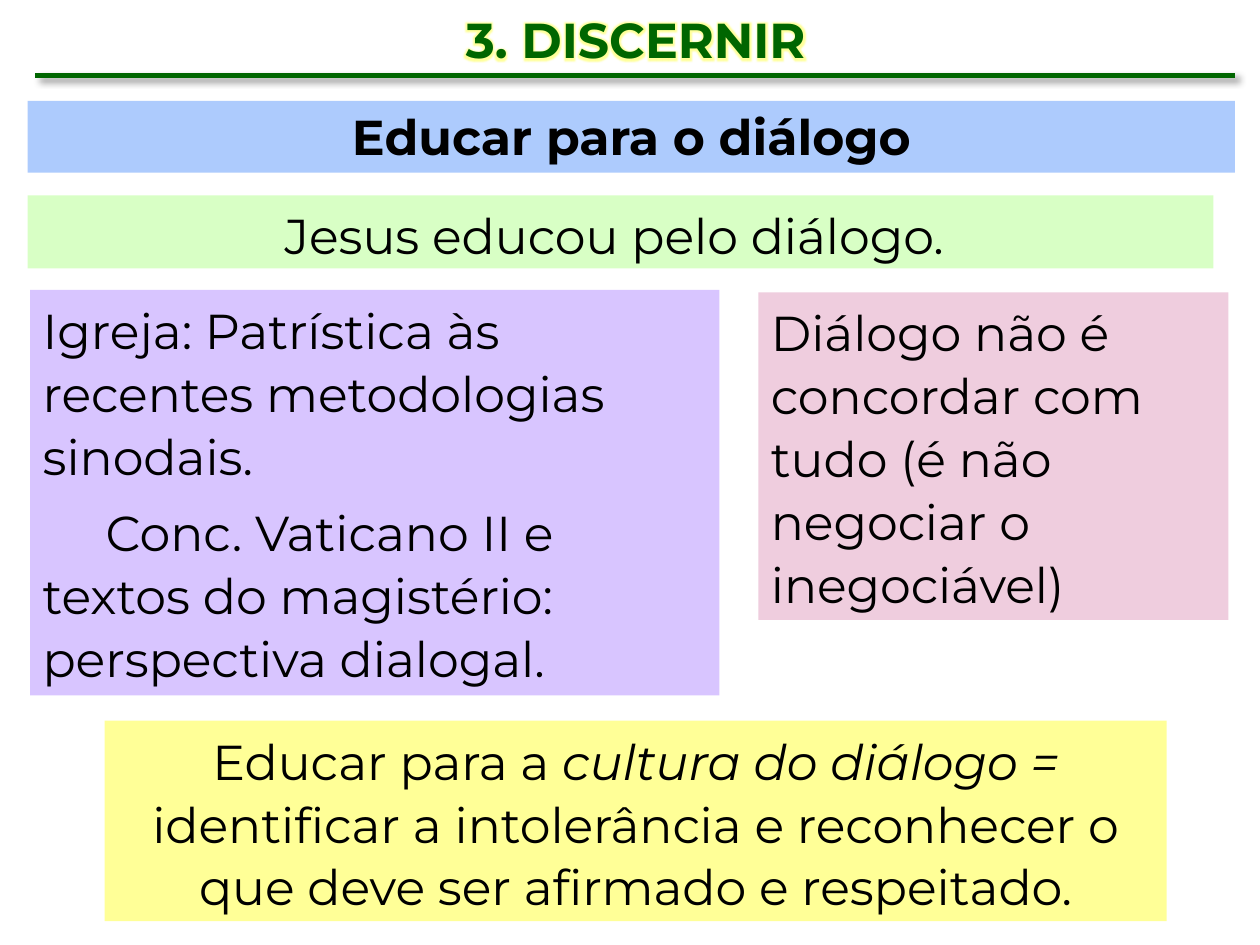
from dataclasses import dataclass

from lxml import etree
from pptx import Presentation
from pptx import util as u
from pptx.dml.color import RGBColor
from pptx.enum import shapes, text
from pptx.oxml.ns import qn

COLORS = {
    "green": "006600", "black": "000000", "glow": "FFFF99",
    "blue": "ADCBFD", "mint": "D8FFC5", "pink": "EFCDDE",
    "lilac": "D8C5FF", "yellow": "FFFF97",
}
FONT = {"name": "Montserrat", "size": u.Pt(28)}
BODY = {"line_spacing": 1.07, "space_after": u.Pt(8)}
CENTER = {"alignment": text.PP_ALIGN.CENTER}
LEFT = {"alignment": text.PP_ALIGN.LEFT}
BOLD = {"bold": True}
ITALIC = {"italic": True}


@dataclass
class Run:
    text: str
    fmt: dict


@dataclass
class Panel:
    box: tuple[float, float, float, float]
    fill: str
    para_fmt: dict
    paragraphs: list[list[Run]]


PANELS = [
    Panel((0.22, 0.8, 9.58, 0.57), "blue", CENTER,
          [[Run("Educar para o diálogo", BOLD)]]),
    Panel((0.22, 1.55, 9.41, 0.58), "mint", BODY | CENTER,
          [[Run("Jesus educou pelo diálogo. ", {})]]),
    Panel((6.02, 2.32, 3.73, 2.6), "pink", BODY | LEFT,
          [[Run("Diálogo não é concordar com tudo (é não negociar o inegociável)", {})]]),
    Panel((0.24, 2.3, 5.47, 3.22), "lilac", BODY | LEFT,
          [[Run("Igreja: Patrística às recentes metodologias sinodais.", {})],
           [Run("\tConc. Vaticano II e textos do magistério: perspectiva dialogal.", {})]]),
    Panel((0.83, 5.72, 8.43, 1.59), "yellow", BODY | CENTER,
          [[Run("Educar para a ", {}),
            Run("cultura do diálogo =", ITALIC),
            Run(" identificar a intolerância e reconhecer o que deve ser "
                "afirmado e respeitado.", {})]]),
]


def rgb(name: str) -> RGBColor:
    return RGBColor.from_string(COLORS[name])


def apply(target, fmt: dict) -> None:
    for key, value in fmt.items():
        setattr(target, key, value)


def add_run(p, run: Run, color: str = "black"):
    r = p.add_run()
    r.text = run.text
    apply(r.font, FONT | run.fmt)
    r.font.color.rgb = rgb(color)
    return r


def effect_list(tag: str, color: str, alpha: int, **attrs):
    effects = etree.Element(qn("a:effectLst"))
    effect = etree.SubElement(effects, qn(f"a:{tag}"),
                              {k: str(v) for k, v in attrs.items()})
    clr = etree.SubElement(effect, qn("a:srgbClr"), val=COLORS[color])
    etree.SubElement(clr, qn("a:alpha"), val=str(alpha * 1000))
    return effects


def add_title(s) -> None:
    sp = s.shapes.add_textbox(*map(u.Inches, (0.28, 0.05, 9.53, 0.52)))
    tf = sp.text_frame
    apply(tf, {"word_wrap": True, "vertical_anchor": text.MSO_ANCHOR.MIDDLE})
    p = tf.paragraphs[0]
    apply(p, CENTER)
    r = add_run(p, Run("3. DISCERNIR", BOLD), "green")
    fill = r.font._element.find(qn("a:solidFill"))
    fill.addnext(effect_list("glow", "glow", 100, rad=u.Pt(5)))


def add_rule(s) -> None:
    line = s.shapes.add_connector(
        shapes.MSO_CONNECTOR.STRAIGHT, *map(u.Inches, (0.28, 0.6, 9.8, 0.6)))
    line.line.color.rgb = rgb("green")
    line.line.width = u.Pt(3)
    line._element.spPr.append(effect_list(
        "outerShdw", "black", 40, blurRad=u.Pt(4), dist=u.Pt(3),
        dir=45 * 60000, rotWithShape=0))


def add_panel(s, panel: Panel) -> None:
    sp = s.shapes.add_shape(shapes.MSO_SHAPE.RECTANGLE, *map(u.Inches, panel.box))
    sp.shadow.inherit = False
    sp.fill.solid()
    sp.fill.fore_color.rgb = rgb(panel.fill)
    sp.line.fill.background()
    tf = sp.text_frame
    apply(tf, {"word_wrap": True, "vertical_anchor": text.MSO_ANCHOR.TOP,
               "auto_size": text.MSO_AUTO_SIZE.SHAPE_TO_FIT_TEXT})
    for i, runs in enumerate(panel.paragraphs):
        p = tf.add_paragraph() if i else tf.paragraphs[0]
        apply(p, panel.para_fmt)
        for run in runs:
            add_run(p, run)


def main() -> None:
    prs = Presentation()
    prs.slide_width, prs.slide_height = u.Inches(10), u.Inches(7.5)
    s = prs.slides.add_slide(prs.slide_layouts[6])
    add_title(s)
    add_rule(s)
    for panel in PANELS:
        add_panel(s, panel)
    prs.save("out.pptx")


if __name__ == "__main__":
    main()
